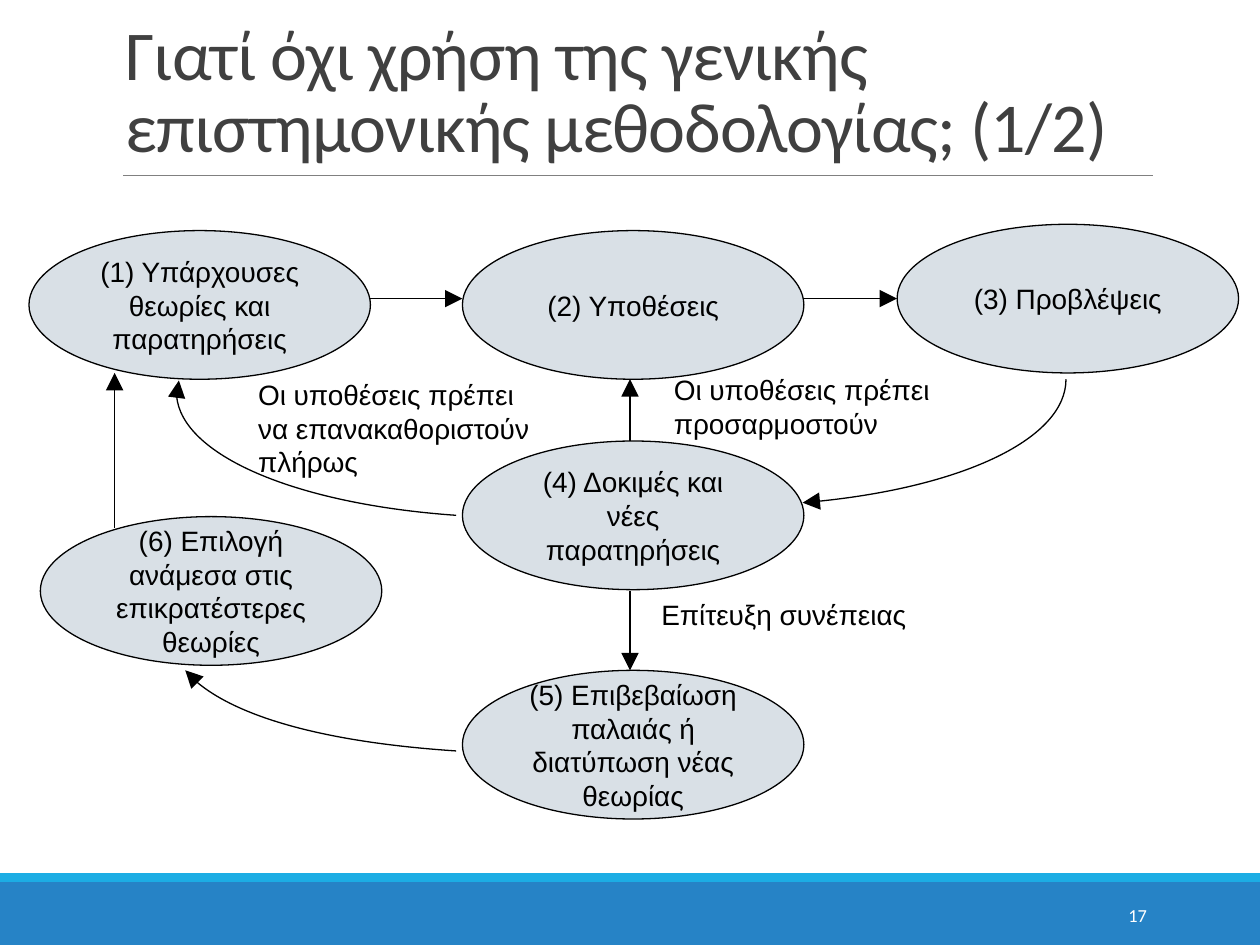
from dataclasses import dataclass

from lxml import etree
from pptx import Presentation
from pptx.dml.color import RGBColor
from pptx.enum.shapes import MSO_CONNECTOR as Connector, MSO_SHAPE as Shape
from pptx.enum.text import MSO_ANCHOR as Anchor, PP_ALIGN as Align
from pptx.oxml.ns import qn
from pptx.util import Inches, Pt


@dataclass(frozen=True)
class Theme:
    title: str = "404040"
    ink: str = "000000"
    node: str = "D9E0E6"
    rule: str = "808080"
    band: str = "2683C6"
    accent: str = "1CADE4"
    white: str = "FFFFFF"
    heading_font: str = "Calibri"
    body_font: str = "Arial"
    title_size: float = 40
    body_size: float = 16
    number_size: float = 10.5
    line_width: float = 0.75
    rule_width: float = 0.5


@dataclass(frozen=True)
class Box:
    left: float
    top: float
    width: float
    height: float

    def inside(self, left, top, width, height):
        return Box(self.left + left, self.top + top, width, height)

    def point(self, x, y):
        return self.left + x, self.top + y

    def lengths(self):
        return [Inches(n) for n in (self.left, self.top, self.width, self.height)]


THEME = Theme()
NODE_WIDTH, NODE_HEIGHT = 2.71, 1.18

# Node positions and all arrows are measured from the diagram's corner
NODES = [
    (0, 0.05, "(1) Υπάρχουσες θεωρίες και παρατηρήσεις"),
    (3.44, 0.05, "(2) Υποθέσεις"),
    (6.89, 0, "(3) Προβλέψεις"),
    (3.44, 1.72, "(4) Δοκιμές και νέες παρατηρήσεις"),
    (3.44, 3.54, "(5) Επιβεβαίωση παλαιάς ή διατύπωση νέας θεωρίας"),
    (0.09, 2.32, "(6) Επιλογή ανάμεσα στις επικρατέστερες θεωρίες"),
]
ARROWS = [
    ((2.7, 0.59), (3.44, 0.59)),
    ((6.15, 0.59), (6.89, 0.59)),
    ((4.77, 1.72), (4.77, 1.23)),
    ((4.77, 2.91), (4.77, 3.54)),
    ((0.68, 2.41), (0.68, 1.18)),
]
# Each curve is a start followed by groups of three Bézier points
CURVES = [
    [(8.23, 1.23), (8.23, 1.7), (7.36, 2.11), (6.14, 2.21)],
    [(3.39, 2.31), (2.1, 2.22), (1.17, 1.81), (1.17, 1.33),
     (1.17, 1.3), (1.18, 1.27), (1.19, 1.24)],
    [(3.39, 4.18), (2.33, 4.11), (1.49, 3.86), (1.24, 3.54)],
]
LABELS = [
    (1.72, 1.17, 2.51, 0.9, "Οι υποθέσεις πρέπει να επανακαθοριστούν πλήρως"),
    (5.02, 1.13, 2.36, 0.64, "Οι υποθέσεις πρέπει προσαρμοστούν"),
    (4.92, 2.91, 2.36, 0.37, "Επίτευξη συνέπειας"),
]


def color(code):
    return RGBColor.from_string(code)


def write(shape, text, *, font=THEME.body_font, size=THEME.body_size, ink=THEME.ink,
          align=Align.LEFT, anchor=Anchor.TOP, leading=None, tracking=None):
    frame = shape.text_frame
    frame.word_wrap = True
    frame.vertical_anchor = anchor
    para = frame.paragraphs[0]
    para.alignment = align
    if leading:
        para.line_spacing = leading
    span = para.add_run()
    span.text = text
    span.font.name, span.font.size = font, Pt(size)
    span.font.color.rgb = color(ink)
    if tracking:
        span.font._element.set("spc", str(int(tracking * 100)))


def add_text(page, box, text, **style):
    write(page.shapes.add_textbox(*box.lengths()), text, **style)


def add_filled(page, kind, box, fill, outline=None):
    shape = page.shapes.add_shape(kind, *box.lengths())
    shape.shadow.inherit = False
    shape.fill.solid()
    shape.fill.fore_color.rgb = color(fill)
    if outline:
        set_line(shape, outline, THEME.line_width)
    else:
        shape.line.fill.background()
    return shape


def set_line(shape, ink, width, arrow=False):
    shape.line.color.rgb = color(ink)
    shape.line.width = Pt(width)
    if arrow:
        etree.SubElement(shape.line._get_or_add_ln(), qn("a:tailEnd"),
                         type="triangle", w="lg", len="lg")


def add_line(page, start, end, ink, width, arrow=False):
    line = page.shapes.add_connector(
        Connector.STRAIGHT, *[Inches(n) for n in (*start, *end)])
    set_line(line, ink, width, arrow)
    etree.SubElement(line._element.spPr, qn("a:effectLst"))


def add_curve(page, points):
    start, *rest = [(Inches(x), Inches(y)) for x, y in points]
    builder = page.shapes.build_freeform(*start)
    builder.add_line_segments(rest, close=False)
    curve = builder.convert_to_shape()
    curve.shadow.inherit = False
    curve.fill.background()
    set_line(curve, THEME.ink, THEME.line_width, arrow=True)
    # Turn every three straight segments into one cubic Bézier
    segments = list(curve._element.iter(qn("a:lnTo")))
    for first in range(0, len(segments), 3):
        group = segments[first:first + 3]
        bezier = etree.Element(qn("a:cubicBezTo"))
        group[0].addprevious(bezier)
        for segment in group:
            bezier.append(segment[0])
            segment.getparent().remove(segment)


def add_footer(page, box):
    add_filled(page, Shape.RECTANGLE, box.inside(0, 0.07, box.width, 0.5), THEME.band)
    add_filled(page, Shape.RECTANGLE, box.inside(0, 0, box.width, 0.07), THEME.accent)
    add_text(page, box.inside(8.12, 0.13, 1.08, 0.4), "17", font=THEME.heading_font,
             size=THEME.number_size, ink=THEME.white, align=Align.RIGHT,
             anchor=Anchor.MIDDLE)


def add_title(page, box, text):
    add_line(page, box.point(0.08, 1.28), box.point(box.width, 1.28),
             THEME.rule, THEME.rule_width)
    add_text(page, box, text, font=THEME.heading_font, size=THEME.title_size,
             ink=THEME.title, anchor=Anchor.BOTTOM, leading=0.85, tracking=-0.5)


def add_diagram(page, box):
    for left, top, text in NODES:
        node = add_filled(page, Shape.OVAL, box.inside(left, top, NODE_WIDTH, NODE_HEIGHT),
                          THEME.node, THEME.ink)
        write(node, text, align=Align.CENTER, anchor=Anchor.MIDDLE)
    for start, end in ARROWS:
        add_line(page, box.point(*start), box.point(*end),
                 THEME.ink, THEME.line_width, arrow=True)
    for points in CURVES:
        add_curve(page, [box.point(*point) for point in points])
    for *place, text in LABELS:
        add_text(page, box.inside(*place), text)


def main():
    deck = Presentation()
    deck.slide_width, deck.slide_height = Inches(10), Inches(7.5)
    page = deck.slides.add_slide(deck.slide_layouts[6])
    add_footer(page, Box(0, 6.93, 10, 0.57))
    add_title(page, Box(0.9, 0.11, 8.25, 1.26),
              "Γιατί όχι χρήση της γενικής επιστημονικής μεθοδολογίας; (1/2)")
    add_diagram(page, Box(0.23, 1.78, 9.6, 4.72))
    deck.save("out.pptx")


if __name__ == "__main__":
    main()
